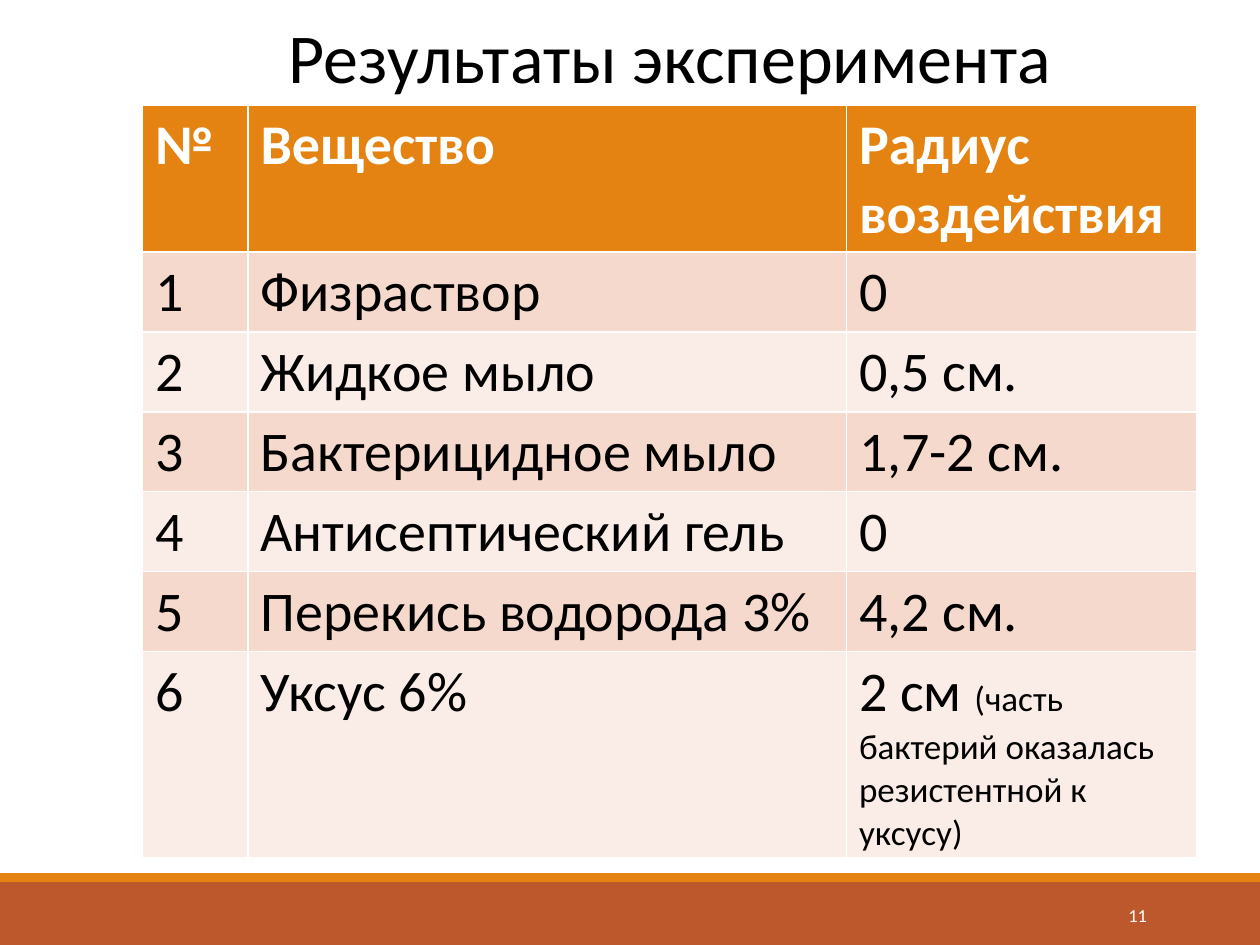
import pptx
import pptx.util
import pptx.dml.color
import pptx.enum.shapes
import pptx.enum.text
from pptx.util import Pt

TITLE = "Результаты эксперимента"
PAGE_NUMBER = "11"
HEADER = ("№", "Вещество", "Радиус воздействия")
# A cell is a tuple of runs where it holds a smaller remark after its value.
RESULTS = [
    ("Физраствор", "0"),
    ("Жидкое мыло", "0,5 см."),
    ("Бактерицидное мыло", "1,7-2 см."),
    ("Антисептический гель", "0"),
    ("Перекись водорода 3%", "4,2 см."),
    ("Уксус 6%", ("2 см ", "(часть бактерий оказалась резистентной к уксусу)")),
]

THEME = {
    "font": "Calibri",
    "text": "000000", "light": "FFFFFF",
    "accent": "E48312", "footer": "BD582C",
    "bands": ("F5D9CC", "FAEDE7"),
    "title_size": 40, "table_size": 32, "remark_size": 20, "number_size": 10.5,
}
PAGE_WIDTH, PAGE_HEIGHT = 720, 540
FOOTER_HEIGHT, STRIPE_HEIGHT = 36, 5
TABLE_LEFT, TABLE_TOP = 81.5, 60
COLUMN_WIDTHS = (60.2, 342, 200.4)
ROW_HEIGHT = 29.2


def rgb(name):
    return pptx.dml.color.RGBColor.from_string(name)


def style_run(run, size, color, bold=False):
    run.font.name = THEME["font"]
    run.font.size = Pt(size)
    run.font.bold = bold
    run.font.color.rgb = rgb(color)


def add_bar(page, top, height, color):
    bar = page.shapes.add_shape(pptx.enum.shapes.MSO_SHAPE.RECTANGLE,
                                0, Pt(top), Pt(PAGE_WIDTH), Pt(height))
    bar.shadow.inherit = False
    bar.fill.solid()
    bar.fill.fore_color.rgb = rgb(color)
    bar.line.fill.background()


def add_label(page, area, text, size, color, align, anchor):
    box = page.shapes.add_textbox(*map(Pt, area))
    frame = box.text_frame
    frame.word_wrap = True
    frame.vertical_anchor = anchor
    frame.text = text
    para = frame.paragraphs[0]
    para.alignment = align
    style_run(para.runs[0], size, color)


def fill_cell(cell, content, fill, color, bold):
    cell.fill.solid()
    cell.fill.fore_color.rgb = rgb(fill)
    spans = (content,) if isinstance(content, str) else content
    para = cell.text_frame.paragraphs[0]
    for text, size in zip(spans, (THEME["table_size"], THEME["remark_size"])):
        span = para.add_run()
        span.text = text
        style_run(span, size, color, bold)


def add_results_table(page):
    rows = [HEADER] + [(str(number), *result)
                       for number, result in enumerate(RESULTS, 1)]
    table = page.shapes.add_table(
        len(rows), len(HEADER), Pt(TABLE_LEFT), Pt(TABLE_TOP),
        Pt(sum(COLUMN_WIDTHS)), Pt(ROW_HEIGHT * len(rows))).table
    for column, width in zip(table.columns, COLUMN_WIDTHS):
        column.width = Pt(width)
    for index, row in enumerate(rows):
        table.rows[index].height = Pt(ROW_HEIGHT)
        is_header = index == 0
        fill = THEME["accent"] if is_header else THEME["bands"][(index - 1) % 2]
        color = THEME["light"] if is_header else THEME["text"]
        for column, content in enumerate(row):
            fill_cell(table.cell(index, column), content, fill, color, is_header)


def main():
    deck = pptx.Presentation()
    deck.slide_width, deck.slide_height = Pt(PAGE_WIDTH), Pt(PAGE_HEIGHT)
    page = deck.slides.add_slide(deck.slide_layouts[6])
    footer_top = PAGE_HEIGHT - FOOTER_HEIGHT
    align, anchor = pptx.enum.text.PP_ALIGN, pptx.enum.text.MSO_ANCHOR

    add_bar(page, footer_top, FOOTER_HEIGHT, THEME["footer"])
    add_bar(page, footer_top - STRIPE_HEIGHT, STRIPE_HEIGHT, THEME["accent"])
    add_label(page, (139, 4.3, 487.4, 55.4), TITLE,
              THEME["title_size"], THEME["text"], align.CENTER, anchor.TOP)
    add_results_table(page)
    add_label(page, (584.6, 508.3, 77.8, 28.8), PAGE_NUMBER,
              THEME["number_size"], THEME["light"], align.RIGHT, anchor.MIDDLE)
    deck.save("out.pptx")


if __name__ == "__main__":
    main()
